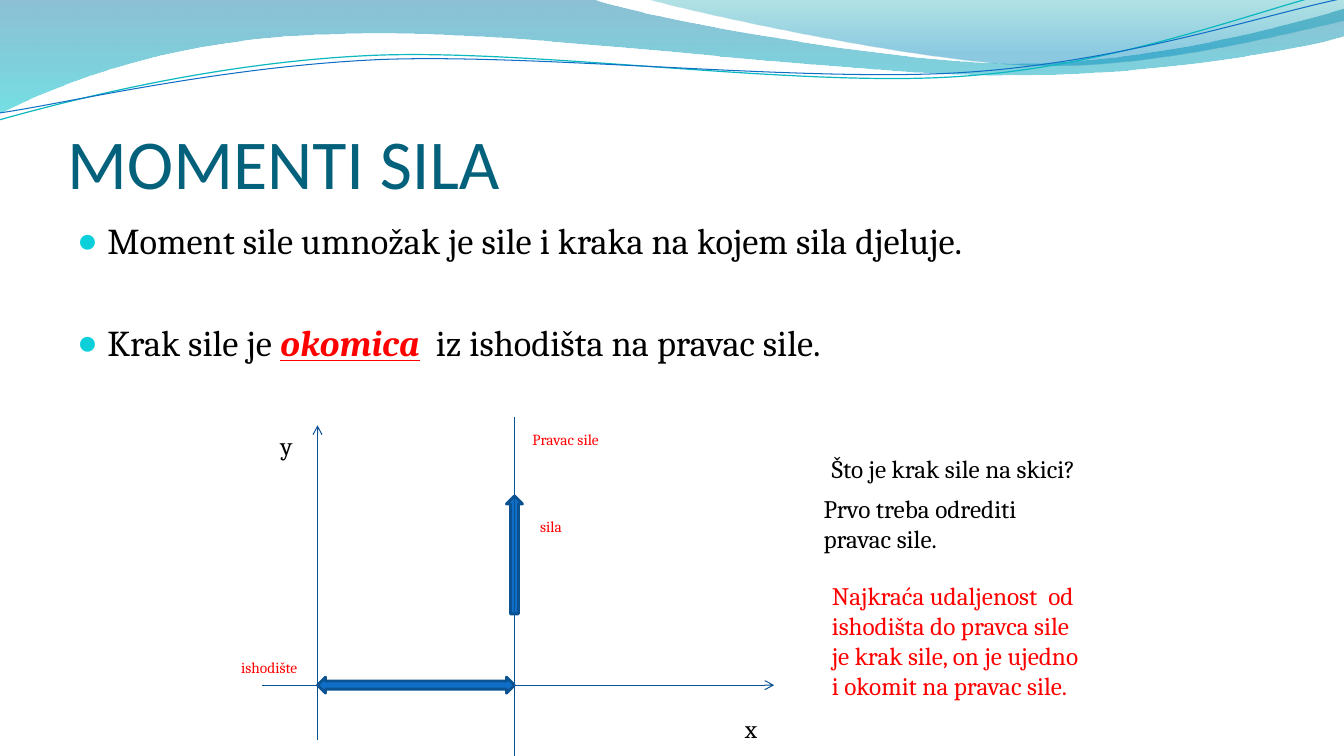
from dataclasses import dataclass

import pptx
import pptx.dml.color
import pptx.enum.shapes
import pptx.enum.text
import pptx.oxml
import pptx.oxml.ns
import pptx.util

Pt = pptx.util.Pt
qn = pptx.oxml.ns.qn
SHAPE = pptx.enum.shapes.MSO_SHAPE
ANCHOR = pptx.enum.text.MSO_ANCHOR


@dataclass(frozen=True)
class Theme:
    heading: str = "Calibri"
    body: str = "Cambria"
    title_size: float = 50
    body_size: float = 26
    note_size: float = 18
    label_size: float = 11
    title: str = "04617B"
    text: str = "000000"
    accent: str = "FF0000"
    bullet: str = "0BD0D9"
    axis: str = "095295"
    arrow: str = "0F6FC6"
    arrow_edge: str = "0B5292"
    teal_line: str = "0AB8BF"
    back_wave: tuple = ((0, "0074A1", 45), (1, "00C6CF", 55))
    front_wave: tuple = ((0, "00A1A9", 30), (0.8, "008BBF", 45))


T = Theme()

# Each wave: a start point, then (x, y) line ends or six-number curves
BACK_WAVE = [(-0.7, 0), (422.6, -0.7),
             (456.5, 12.2, 637.2, 45.4, 727.9, 45.4),
             (819.4, 45.4, 920.2, 18.7, 960, 6.5), (961.2, 25.9),
             (943.9, 31.7, 835.2, 54.7, 715.7, 54),
             (596.9, 54, 366.5, 20.2, 247, 24.5),
             (123.8, 25.9, 43.9, 59.8, -0.7, 81.4)]
FRONT_WAVE = [(460, -0.7),
              (488.9, 7.9, 654.5, 44.6, 738, 46.8),
              (821.5, 49.7, 923, 23, 960, 15.1), (960, 0)]
TEAL_CURVE = [(-0.7, 85.7),
              (46.1, 72.7, 151.9, 44.6, 265.7, 39.6),
              (379.4, 34.6, 568.8, 62.6, 684, 54.7),
              (799.2, 47.5, 901.4, 5.8, 958.3, -7.2)]
BLUE_CURVE = [(0, 80.6),
              (45.4, 74.2, 157, 47.5, 272.2, 42.5),
              (386.6, 38.2, 573.1, 59, 687.6, 51.8),
              (802.8, 44.6, 903.6, 10.1, 960.5, -1.4)]


def rgb(color):
    return pptx.dml.color.RGBColor.from_string(color)


def add_xml(parent, tag, **attrs):
    el = pptx.oxml.parse_xml(f"<a:{tag} {pptx.oxml.ns.nsdecls('a')}/>")
    for name, value in attrs.items():
        el.set(name, str(value))
    parent.append(el)
    return el


def add_outline(s, outline, closed):
    """Build a freeform through the segment ends, then bend the curved ones."""
    ends = [(Pt(seg[-2]), Pt(seg[-1])) for seg in outline]
    builder = s.shapes.build_freeform(*ends[0], scale=1.0)
    builder.add_line_segments(ends[1:], close=closed)
    sp = builder.convert_to_shape()
    sp.shadow.inherit = False
    left, top = (min(axis) for axis in zip(*ends))
    for ln, seg in zip(list(sp._element.iter(qn("a:lnTo"))), outline[1:]):
        if len(seg) == 6:
            curve = add_xml(ln.getparent(), "cubicBezTo")
            ln.getparent().replace(ln, curve)
            for x, y in zip(seg[::2], seg[1::2]):
                add_xml(curve, "pt", x=Pt(x) - left, y=Pt(y) - top)
    return sp


def add_wave(s, outline, stops):
    sp = add_outline(s, outline, True)
    sp.line.fill.background()
    sp.fill.gradient()
    sp.fill.gradient_angle = 270
    for stop, (pos, color, alpha) in zip(sp.fill.gradient_stops, stops):
        stop.position = pos
        stop.color.rgb = rgb(color)
    for clr, (pos, color, alpha) in zip(sp._element.spPr.iter(qn("a:srgbClr")), stops):
        add_xml(clr, "alpha", val=alpha * 1000)


def add_curve(s, outline, color, width):
    sp = add_outline(s, outline, False)
    sp.fill.background()
    sp.line.color.rgb = rgb(color)
    sp.line.width = Pt(width)


def add_line(s, x1, y1, x2, y2, arrow=False):
    c = s.shapes.add_connector(pptx.enum.shapes.MSO_CONNECTOR.STRAIGHT,
                               Pt(x1), Pt(y1), Pt(x2), Pt(y2))
    c.line.color.rgb = rgb(T.axis)
    c.line.width = Pt(0.75)
    if arrow:
        add_xml(c._element.spPr.find(qn("a:ln")), "tailEnd", type="arrow")
    add_xml(c._element.spPr, "effectLst")


def add_block_arrow(s, kind, x, y, w, h):
    sp = s.shapes.add_shape(kind, Pt(x), Pt(y), Pt(w), Pt(h))
    sp.shadow.inherit = False
    sp.fill.solid()
    sp.fill.fore_color.rgb = rgb(T.arrow)
    sp.line.color.rgb = rgb(T.arrow_edge)
    sp.line.width = Pt(2)


def add_frame(s, x, y, w, h, wrap=True):
    tf = s.shapes.add_textbox(Pt(x), Pt(y), Pt(w), Pt(h)).text_frame
    tf.word_wrap = wrap
    return tf


def add_run(p, text, size, color, font=T.body, strong=False):
    r = p.add_run()
    r.text = text
    r.font.name = font
    r.font.size = Pt(size)
    r.font.color.rgb = rgb(color)
    if strong:
        r.font.bold = r.font.italic = r.font.underline = True


def add_text(s, text, x, y, w, h, size, color, wrap=True):
    tf = add_frame(s, x, y, w, h, wrap)
    add_run(tf.paragraphs[0], text, size, color)


def add_bullet(p):
    pPr = p._p.get_or_add_pPr()
    pPr.set("marL", str(Pt(21.6)))
    pPr.set("indent", str(-Pt(21.6)))
    add_xml(add_xml(pPr, "buClr"), "srgbClr", val=T.bullet)
    add_xml(pPr, "buSzPct", val=95000)
    add_xml(pPr, "buFont", typeface="Arial")
    add_xml(pPr, "buChar", char="●")


def main():
    prs = pptx.Presentation()
    prs.slide_width, prs.slide_height = Pt(960), Pt(540)
    s = prs.slides.add_slide(prs.slide_layouts[6])

    # Waves along the top
    add_wave(s, BACK_WAVE, T.back_wave)
    add_wave(s, FRONT_WAVE, T.front_wave)
    add_curve(s, TEAL_CURVE, T.teal_line, 0.85)
    add_curve(s, BLUE_CURVE, T.arrow, 0.75)

    # Title
    tf = add_frame(s, 48, 55.4, 864, 90)
    tf.vertical_anchor = ANCHOR.BOTTOM
    tf.margin_left = tf.margin_right = tf.margin_bottom = 0
    add_run(tf.paragraphs[0], "MOMENTI SILA", T.title_size, T.title, T.heading)

    # Definitions
    tf = add_frame(s, 48, 152.6, 864, 345.6)
    p = tf.paragraphs[0]
    add_bullet(p)
    add_run(p, "Moment sile umnožak je sile i kraka na kojem sila djeluje.", T.body_size, T.text)
    p = tf.add_paragraph()
    add_bullet(p)
    p.space_before = Pt(41.6)
    add_run(p, "Krak sile je ", T.body_size, T.text)
    add_run(p, "okomica", T.body_size, T.accent, strong=True)
    add_run(p, "  iz ishodišta na pravac sile.", T.body_size, T.text)

    # Sketch: axes, line of the force, force and its arm
    origin_x, origin_y, force_x = 226.8, 489.4, 367.5
    add_line(s, origin_x, 528.5, origin_x, 303.8, arrow=True)
    add_line(s, 187.2, origin_y, 553, origin_y, arrow=True)
    add_block_arrow(s, SHAPE.UP_ARROW, force_x - 5.75, 354.2, 11.5, 84.3)
    add_line(s, force_x, 298.1, force_x, 540)
    add_block_arrow(s, SHAPE.LEFT_RIGHT_ARROW, origin_x, origin_y - 5.75,
                    force_x - origin_x, 11.5)

    # Sketch labels
    add_text(s, "y", 193.2, 303.8, 22.3, 29, T.note_size, T.text)
    add_text(s, "x", 524.9, 506.2, 23, 29, T.note_size, T.text, wrap=False)
    for text, x, y in [("ishodište", 165.1, 466.6), ("sila", 378.7, 365.8),
                       ("Pravac sile", 373.2, 303.8)]:
        add_text(s, text, x, y, 67.7, 20.9, T.label_size, T.accent)

    # Question and answer
    for text, x, y, w, h, color in [
        ("Što je krak sile na skici?", 587, 320.4, 196.6, 29, T.text),
        ("Prvo treba odrediti pravac sile.", 581.2, 348.6, 185.8, 51, T.text),
        ("Najkraća udaljenost  od ishodišta do pravca sile je krak sile, "
         "on je ujedno i okomit na pravac sile.", 587.1, 410.7, 191.5, 116.6, T.accent),
    ]:
        add_text(s, text, x, y, w, h, T.note_size, color)

    prs.save("out.pptx")


if __name__ == "__main__":
    main()
